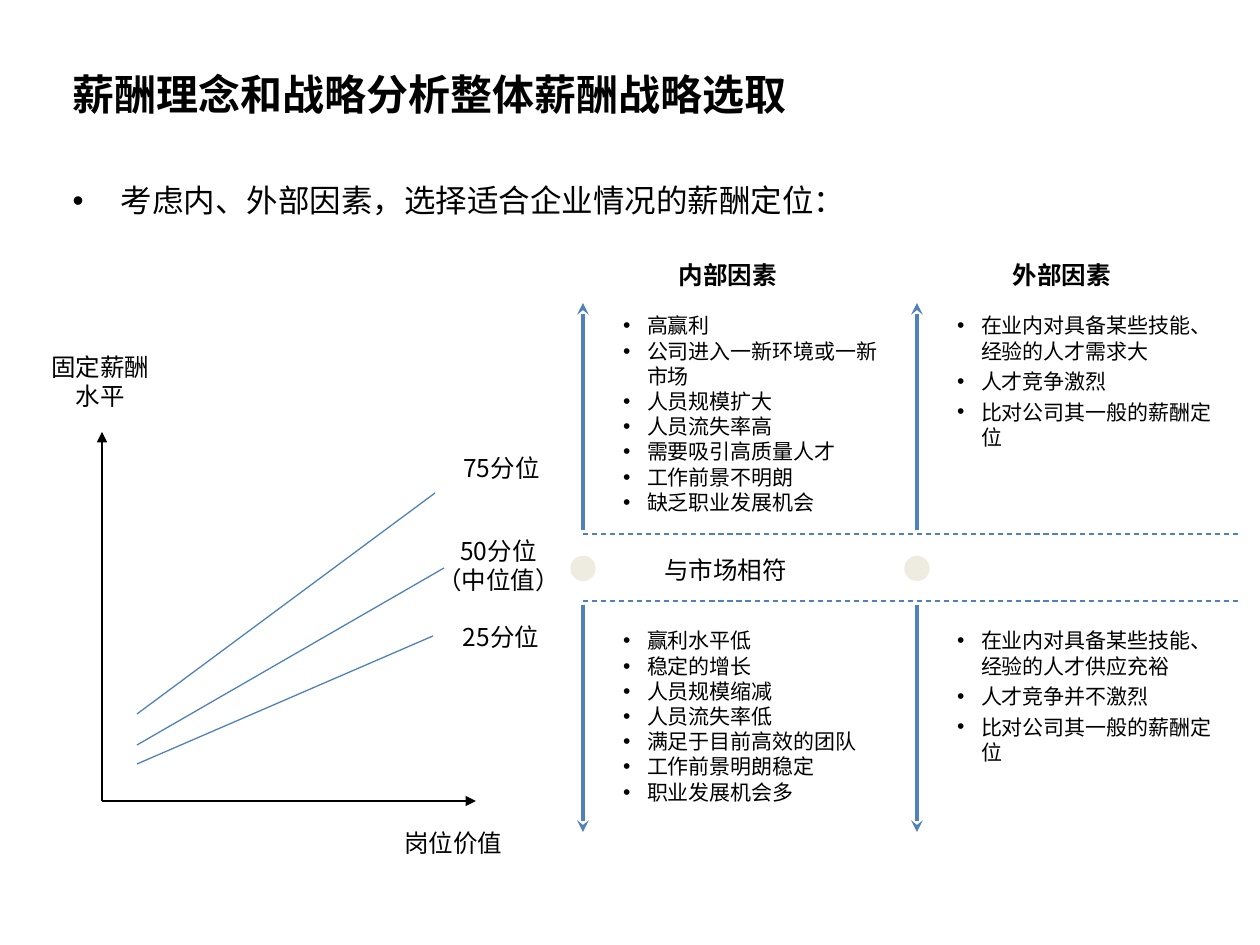
from dataclasses import dataclass
from lxml.etree import SubElement
from pptx import Presentation
from pptx.dml.color import RGBColor
from pptx.enum.dml import MSO_LINE
from pptx.enum.shapes import MSO_CONNECTOR, MSO_SHAPE
from pptx.enum.text import MSO_ANCHOR, MSO_AUTO_SIZE, PP_ALIGN
from pptx.oxml.ns import qn
from pptx.util import Emu, Pt


@dataclass(frozen=True)
class Theme:
    font: str = "Noto Sans CJK SC"
    ink: str = "000000"
    blue: str = "4F81BD"
    beige: str = "EEECE1"
    title: int = 24
    lead: int = 18
    label: int = 14
    item: int = 12
    thin: float = 0.75
    thick: float = 2.25
    leading: float = 1.2


TITLE = "薪酬理念和战略分析整体薪酬战略选取"
LEAD = "考虑内、外部因素，选择适合企业情况的薪酬定位："

LABELS = [
    (["固定薪酬", "水平"], 15, 339, 171),
    (["75分位"], 416, 440, 171),
    (["50分位", "（中位值）"], 413, 523, 171),
    (["25分位"], 425, 609, 152),
    (["岗位价值"], 368, 815, 171),
    (["与市场相符"], 640, 542, 171),
]
AXES = [(102, 801, 102, 432), (102, 801, 476, 801)]
PERCENTILE_LINES = [
    (137, 764, 433, 636),
    (137, 745, 444, 568),
    (137, 714, 435, 493),
]
FACTORS = [
    {
        "heading": "内部因素",
        "gap": 0,
        "above": ["高赢利", "公司进入一新环境或一新市场", "人员规模扩大", "人员流失率高",
                  "需要吸引高质量人才", "工作前景不明朗", "缺乏职业发展机会"],
        "below": ["赢利水平低", "稳定的增长", "人员规模缩减", "人员流失率低",
                  "满足于目前高效的团队", "工作前景明朗稳定", "职业发展机会多"],
    },
    {
        "heading": "外部因素",
        "gap": 3,
        "above": ["在业内对具备某些技能、经验的人才需求大", "人才竞争激烈",
                  "比对公司其一般的薪酬定位"],
        "below": ["在业内对具备某些技能、经验的人才供应充裕", "人才竞争并不激烈",
                  "比对公司其一般的薪酬定位"],
    },
]
COLUMN_LEFT, COLUMN_STEP, COLUMN_INSET = 583, 334, 27
BAND_TOP, BAND_BOTTOM, BAND_RIGHT = 534, 601, 1241
ARROW_GAP, ARROW_LENGTH, DOT = 4, 227, 24
INSET = 13

THEME = Theme()


def px(n):
    return Emu(round(n * 914400 / 126))


def rgb(value):
    return RGBColor.from_string(value)


def write(tf, lines, size, bold=False, align=PP_ALIGN.LEFT, indent=0, gap=0):
    tf.word_wrap = True
    tf.auto_size = MSO_AUTO_SIZE.NONE
    for i, line in enumerate(lines):
        p = tf.paragraphs[0] if i == 0 else tf.add_paragraph()
        if indent:
            pPr = p._p.get_or_add_pPr()
            pPr.set("marL", str(px(indent)))
            pPr.set("indent", str(-px(indent)))
            SubElement(pPr, qn("a:buFont"), typeface="Arial")
            SubElement(pPr, qn("a:buChar"), char="•")
        p.alignment = align
        p.line_spacing = Pt(round(size * THEME.leading, 1))
        p.space_before = Pt(gap if i else 0)
        r = p.add_run()
        r.text = line
        r.font.name = THEME.font
        r.font.size = Pt(size)
        r.font.bold = bold
        r.font.color.rgb = rgb(THEME.ink)
        SubElement(r.font._element, qn("a:ea"), typeface=THEME.font)


def add_text(s, lines, x, y, w, h, size, **style):
    tf = s.shapes.add_textbox(px(x), px(y), px(w), px(h)).text_frame
    tf.margin_left = tf.margin_right = px(INSET)
    tf.margin_top = tf.margin_bottom = px(INSET)
    write(tf, lines, size, **style)


def add_label(s, lines, x, y, w, bold=False):
    add_text(s, lines, x, y, w, 24 + 30 * len(lines), THEME.label,
             bold=bold, align=PP_ALIGN.CENTER)


def add_line(s, ends, color, width, head=None, dash=None):
    sp = s.shapes.add_connector(MSO_CONNECTOR.STRAIGHT, *map(px, ends))
    sp.line.color.rgb = rgb(color)
    sp.line.width = Pt(width)
    if dash:
        sp.line.dash_style = dash
    if head:
        SubElement(sp.line._get_or_add_ln(), qn("a:tailEnd"), type=head)
    SubElement(sp._element.spPr, qn("a:effectLst"))


def add_dot(s, x, y):
    sp = s.shapes.add_shape(MSO_SHAPE.OVAL, px(x - DOT / 2), px(y - DOT / 2), px(DOT), px(DOT))
    sp.shadow.inherit = False
    sp.fill.solid()
    sp.fill.fore_color.rgb = rgb(THEME.beige)
    sp.line.color.rgb = rgb(THEME.beige)
    sp.line.width = Pt(THEME.thin)


def fill_placeholder(sp, text, y, h, size, anchor, **style):
    sp.left, sp.top, sp.width, sp.height = px(60), px(y), px(1129), px(h)
    sp.text_frame.vertical_anchor = anchor
    write(sp.text_frame, [text], size, **style)


def add_factor(s, x, factor):
    left = x + COLUMN_INSET
    add_label(s, [factor["heading"]], left, 247, 236, bold=True)
    for key, y, h in (("above", 300, 229), ("below", 615, 229)):
        add_text(s, factor[key], left, y, 285, h, THEME.item, indent=24, gap=factor["gap"])
    for start, way in ((BAND_TOP - ARROW_GAP, -1), (BAND_BOTTOM + ARROW_GAP, 1)):
        add_line(s, (x, start, x, start + way * ARROW_LENGTH),
                 THEME.blue, THEME.thick, head="stealth")
    add_dot(s, x, (BAND_TOP + BAND_BOTTOM) / 2 + 1)


def main():
    prs = Presentation()
    prs.slide_width, prs.slide_height = px(1260), px(945)
    s = prs.slides.add_slide(prs.slide_layouts[1])
    fill_placeholder(s.shapes.title, TITLE, 52, 83, THEME.title, MSO_ANCHOR.MIDDLE, bold=True)
    fill_placeholder(s.placeholders[1], LEAD, 175, 93, THEME.lead, MSO_ANCHOR.TOP, indent=48)
    for ends in AXES:
        add_line(s, ends, THEME.ink, THEME.thin, head="triangle")
    for ends in PERCENTILE_LINES:
        add_line(s, ends, THEME.blue, THEME.thin)
    for label in LABELS:
        add_label(s, *label)
    for y in (BAND_TOP, BAND_BOTTOM):
        add_line(s, (COLUMN_LEFT, y, BAND_RIGHT, y), THEME.blue, THEME.thin, dash=MSO_LINE.DASH)
    for i, factor in enumerate(FACTORS):
        add_factor(s, COLUMN_LEFT + i * COLUMN_STEP, factor)
    prs.save("out.pptx")


if __name__ == "__main__":
    main()
